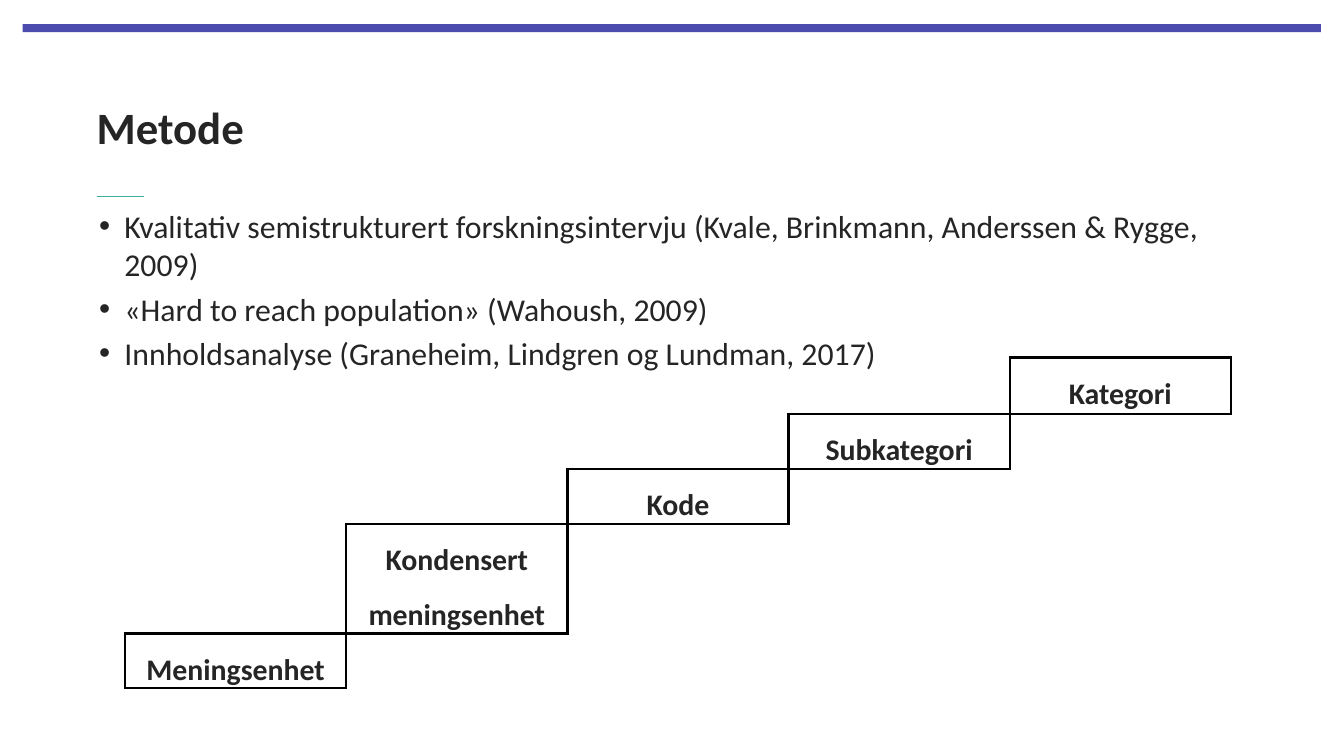
from dataclasses import dataclass

from lxml import etree
from pptx import Presentation
from pptx.dml.color import RGBColor
from pptx.enum.shapes import MSO_CONNECTOR, MSO_SHAPE
from pptx.enum.text import MSO_ANCHOR, PP_ALIGN
from pptx.oxml.ns import qn
from pptx.util import Pt

RECTANGLE = MSO_SHAPE.RECTANGLE
STRAIGHT = MSO_CONNECTOR.STRAIGHT
MIDDLE = MSO_ANCHOR.MIDDLE
TOP = MSO_ANCHOR.TOP
CENTER = PP_ALIGN.CENTER


@dataclass(frozen=True)
class Theme:
    font: str = "Calibri"
    text: str = "252525"
    bar: str = "4B4CAD"
    accent: str = "3BAFA2"
    border: str = "000000"
    title_size: float = 24
    body_size: float = 17
    step_size: float = 16


THEME = Theme()
BULLETS = [
    "Kvalitativ semistrukturert forskningsintervju (Kvale, Brinkmann, Anderssen & Rygge, 2009)",
    "«Hard to reach population» (Wahoush, 2009)",
    "Innholdsanalyse (Graneheim, Lindgren og Lundman, 2017)",
]
STEPS = ["Meningsenhet", "Kondensert meningsenhet", "Kode", "Subkategori", "Kategori"]
ROW_HEIGHTS = [30.4, 29.4, 29.4, 58.6, 29.4]
COLUMN_WIDTH = 118.5
BORDER_WIDTH = 1.5


def style_font(font, size, bold=False):
    font.name = THEME.font
    font.size = Pt(size)
    font.bold = bold
    font.color.rgb = RGBColor.from_string(THEME.text)


def add_bar(slide, left, top, width, height):
    bar = slide.shapes.add_shape(RECTANGLE, Pt(left), Pt(top), Pt(width), Pt(height))
    bar.shadow.inherit = False
    bar.fill.solid()
    bar.fill.fore_color.rgb = RGBColor.from_string(THEME.bar)
    bar.line.fill.background()


def add_rule(slide, left, top, width):
    rule = slide.shapes.add_connector(STRAIGHT, Pt(left), Pt(top), Pt(left + width), Pt(top))
    rule.line.color.rgb = RGBColor.from_string(THEME.accent)
    rule.line.width = Pt(0.5)
    etree.SubElement(rule._element.spPr, qn("a:effectLst"))


def add_text_frame(slide, left, top, width, height, side_margin, anchor):
    box = slide.shapes.add_textbox(Pt(left), Pt(top), Pt(width), Pt(height))
    frame = box.text_frame
    frame.word_wrap = True
    frame.vertical_anchor = anchor
    frame.margin_left = frame.margin_right = Pt(side_margin)
    frame.margin_top = frame.margin_bottom = 0
    return frame


def add_title(slide, text):
    frame = add_text_frame(slide, 51.8, 33.8, 627, 67.7, 0, MIDDLE)
    frame.text = text
    style_font(frame.paragraphs[0].runs[0].font, THEME.title_size, bold=True)


def add_bullet(paragraph):
    properties = paragraph._p.get_or_add_pPr()
    properties.set("marL", str(Pt(13.5)))
    properties.set("indent", str(-Pt(13.5)))
    etree.SubElement(properties, qn("a:buFont"), typeface="Arial")
    etree.SubElement(properties, qn("a:buChar"), char="•")


def add_bullet_list(slide, items):
    frame = add_text_frame(slide, 46.1, 110.8, 632, 246, 7.2, TOP)
    frame.text = "\n".join(items)
    for index, paragraph in enumerate(frame.paragraphs):
        add_bullet(paragraph)
        if index:
            paragraph.space_before = Pt(3.4)
        style_font(paragraph.runs[0].font, THEME.body_size)


def set_borders(cell, visible_sides):
    properties = cell._tc.get_or_add_tcPr()
    for side in "LRTB":
        line = etree.SubElement(properties, qn(f"a:ln{side}"), w=str(Pt(BORDER_WIDTH)))
        if side in visible_sides:
            fill = etree.SubElement(line, qn("a:solidFill"))
            etree.SubElement(fill, qn("a:srgbClr"), val=THEME.border)
        else:
            etree.SubElement(line, qn("a:noFill"))


def fill_step(cell, text):
    cell.text = text
    paragraph = cell.text_frame.paragraphs[0]
    paragraph.alignment = CENTER
    paragraph.line_spacing = 1.5
    style_font(paragraph.runs[0].font, THEME.step_size, bold=True)


def add_staircase(slide, steps, left, top):
    count = len(steps)
    frame = slide.shapes.add_table(
        count, count, Pt(left), Pt(top), Pt(COLUMN_WIDTH * count), Pt(sum(ROW_HEIGHTS))
    )
    table = frame.table
    table.first_row = False
    table.horz_banding = False
    for column in table.columns:
        column.width = Pt(COLUMN_WIDTH)
    for row, height in zip(table.rows, ROW_HEIGHTS):
        row.height = Pt(height)

    diagonal = count - 1
    sides_by_offset = {-1: "RB", 0: "LRTB", 1: "LT"}
    for row in range(count):
        for column in range(count):
            cell = table.cell(row, column)
            cell.margin_left = cell.margin_right = Pt(4.3)
            cell.margin_top = cell.margin_bottom = 0
            offset = row + column - diagonal
            set_borders(cell, sides_by_offset.get(offset, ""))
            cell.fill.background()
            if offset == 0:
                fill_step(cell, steps[column])


def main():
    presentation = Presentation()
    presentation.slide_width = Pt(720)
    presentation.slide_height = Pt(405)
    slide = presentation.slides.add_slide(presentation.slide_layouts[6])
    add_bar(slide, 12.2, 13, 695.5, 4.3)
    add_rule(slide, 51.8, 105.1, 25.2)
    add_title(slide, "Metode")
    add_bullet_list(slide, BULLETS)
    add_staircase(slide, STEPS, 67, 191.5)
    presentation.save("out.pptx")


if __name__ == "__main__":
    main()
